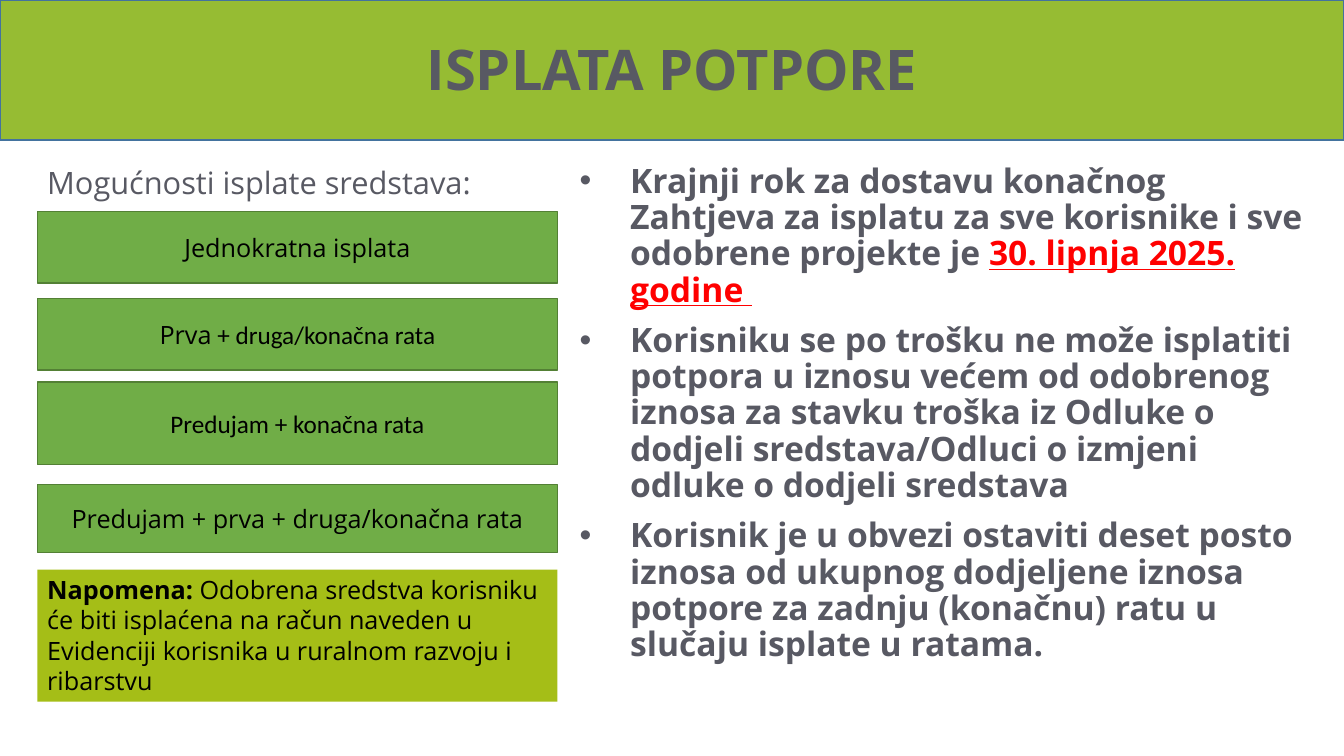
from dataclasses import dataclass
from lxml.etree import SubElement
from pptx import Presentation
from pptx.dml.color import RGBColor
from pptx.enum.shapes import MSO_SHAPE
from pptx.enum.text import MSO_ANCHOR, MSO_AUTO_SIZE, PP_ALIGN
from pptx.oxml.ns import qn
from pptx.util import Inches, Pt


@dataclass(frozen=True)
class Theme:
    band: str = "96BC33"
    band_line: str = "43739E"
    option: str = "70AD47"
    option_line: str = "538035"
    note: str = "A5BE17"
    grey: str = "585963"
    black: str = "000000"
    red: str = "FF0000"
    font: str = "Open Sans"
    alt_font: str = "Calibri"
    title: int = 40
    body: int = 24
    lead: int = 22
    label: int = 18


T = Theme()
W, H = 13.33, 7.5
LEFT, COL_W = 0.37, 5.16
TOP = 1.58

# Payment options: top and height of each bar, then its runs as (text, font)
OPTIONS = [
    (2.10, 0.71, [("Jednokratna isplata", T.font)]),
    (2.96, 0.71, [("Prva", T.font), (" + druga/konačna rata", T.alt_font)]),
    (3.79, 0.82, [("Predujam + konačna rata", T.alt_font)]),
    (4.81, 0.67, [("Predujam + prva + druga/konačna rata", T.font)]),
]

# Rules: each is a list of (text, is deadline)
RULES = [
    [("Krajnji rok za dostavu konačnog Zahtjeva za isplatu za sve korisnike i sve "
      "odobrene projekte je ", False), ("30. lipnja 2025. godine ", True)],
    [("Korisniku se po trošku ne može isplatiti potpora u iznosu većem od odobrenog "
      "iznosa za stavku troška iz Odluke o dodjeli sredstava/Odluci o izmjeni odluke "
      "o dodjeli sredstava", False)],
    [("Korisnik je u obvezi ostaviti deset posto iznosa od ukupnog dodjeljene iznosa "
      "potpore za zadnju (konačnu) ratu u slučaju isplate u ratama.", False)],
]


def place(sp, box):
    sp.left, sp.top, sp.width, sp.height = [Inches(v) for v in box]


def add_run(p, text, size, color, font=T.font, bold=False, underline=False):
    r = p.add_run()
    r.text = text
    r.font.name, r.font.size = font, Pt(size)
    r.font.bold, r.font.underline = bold, underline
    r.font.color.rgb = RGBColor.from_string(color)


def add_rect(s, box, fill, line=None):
    sp = s.shapes.add_shape(MSO_SHAPE.RECTANGLE, *[Inches(v) for v in box])
    sp.shadow.inherit = False
    sp.fill.solid()
    sp.fill.fore_color.rgb = RGBColor.from_string(fill)
    if line:
        sp.line.color.rgb = RGBColor.from_string(line)
        sp.line.width = Pt(1)
    else:
        sp.line.fill.background()
    sp.text_frame.word_wrap = True
    return sp


def add_header(s, box):
    x, y, w, h = box
    band = add_rect(s, box, T.band, T.band_line)
    s.shapes.title._element.addprevious(band._element)  # behind the title
    place(s.shapes.title, (x + LEFT, y + 0.27, w - 2 * LEFT, 0.89))
    tf = s.shapes.title.text_frame
    tf.vertical_anchor = MSO_ANCHOR.MIDDLE
    p = tf.paragraphs[0]
    p.alignment, p.line_spacing = PP_ALIGN.CENTER, 0.9
    add_run(p, "ISPLATA POTPORE", T.title, T.grey, bold=True)


def add_rules(s, box):
    body = s.placeholders[1]
    place(body, box)
    tf = body.text_frame
    tf.auto_size = MSO_AUTO_SIZE.NONE
    for i, rule in enumerate(RULES):
        p = tf.paragraphs[0] if i == 0 else tf.add_paragraph()
        p.line_spacing, p.space_before = 0.9, Pt(10 if i else 0)
        pPr = p._p.get_or_add_pPr()
        pPr.set("marL", str(Inches(0.8)))
        pPr.set("indent", str(Inches(-0.5)))
        SubElement(pPr, qn("a:buFont")).set("typeface", "Arial")
        SubElement(pPr, qn("a:buChar")).set("char", "•")
        for text, deadline in rule:
            add_run(p, text, T.body, T.red if deadline else T.grey,
                    bold=True, underline=deadline)


def add_options(s, box):
    x, y, w, h = box
    # Lead-in line
    lead = s.shapes.add_textbox(*[Inches(v) for v in (x, y, w, 0.77)])
    lead.text_frame.word_wrap = True
    add_run(lead.text_frame.paragraphs[0], "Mogućnosti isplate sredstava:", T.lead, T.grey)
    # Option bars
    for top, height, runs in OPTIONS:
        sp = add_rect(s, (x, top, w, height), T.option, T.option_line)
        sp.text_frame.vertical_anchor = MSO_ANCHOR.MIDDLE
        p = sp.text_frame.paragraphs[0]
        p.alignment = PP_ALIGN.CENTER
        for text, font in runs:
            add_run(p, text, T.label, T.black, font)
    # Note at the foot of the column
    note_h = 1.31
    note = add_rect(s, (x, y + h - note_h, w, note_h), T.note)
    note.text_frame.vertical_anchor = MSO_ANCHOR.TOP
    p = note.text_frame.paragraphs[0]
    p.alignment = PP_ALIGN.LEFT
    add_run(p, "Napomena: ", T.label, T.black, bold=True)
    add_run(p, "Odobrena sredstva korisniku će biti isplaćena na račun naveden u "
               "Evidenciji korisnika u ruralnom razvoju i ribarstvu", T.label, T.black)


def main():
    prs = Presentation()
    prs.slide_width, prs.slide_height = Inches(W), Inches(H)
    s = prs.slides.add_slide(prs.slide_layouts[1])
    add_header(s, (0, 0, W, 1.39))
    add_rules(s, (5.35, TOP, 7.76, 5.04))
    add_options(s, (LEFT, TOP, COL_W, 5.38))
    prs.save("out.pptx")


if __name__ == "__main__":
    main()
